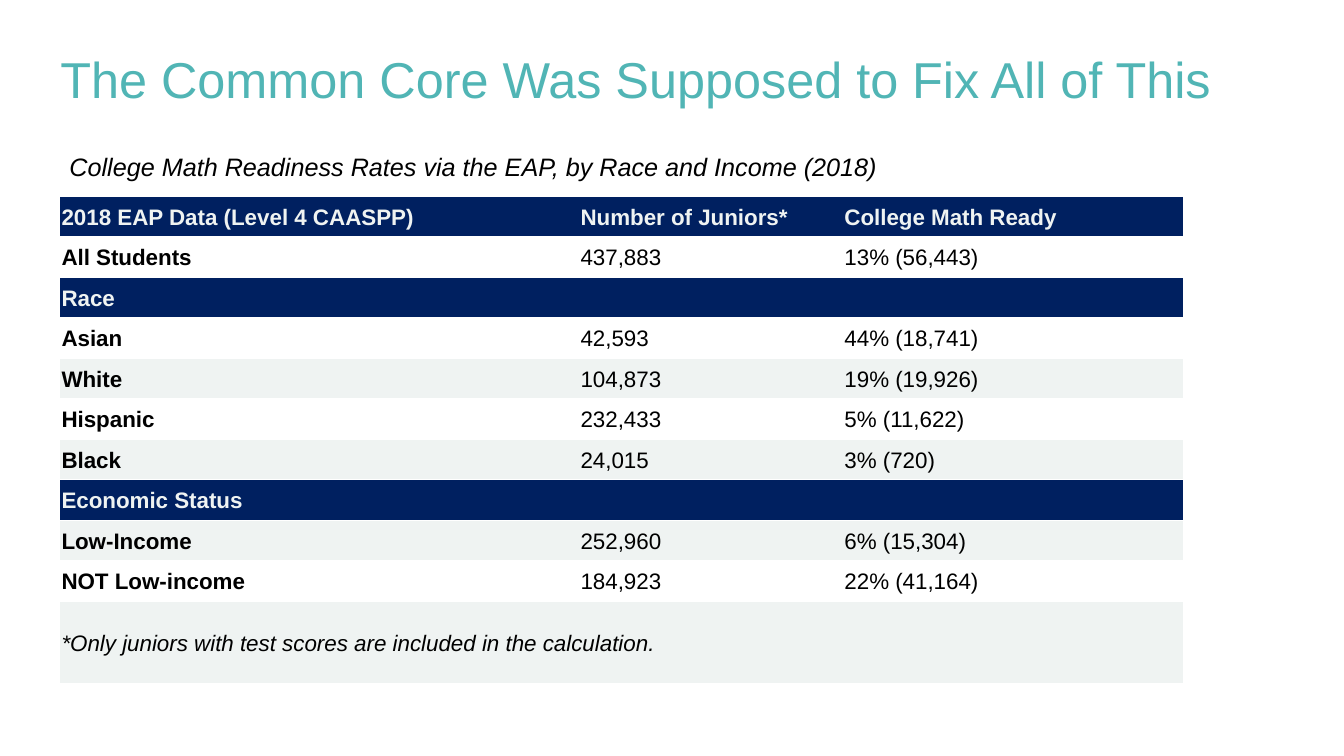
from dataclasses import dataclass

import pptx
import pptx.dml.color
import pptx.enum.text
import pptx.oxml
import pptx.oxml.ns
import pptx.slide
import pptx.table
import pptx.text.text
import pptx.util
from pptx.util import Cm

NAVY = pptx.dml.color.RGBColor(0x00, 0x20, 0x60)
PALE = pptx.dml.color.RGBColor(0xEF, 0xF3, 0xF2)
WHITE = pptx.dml.color.RGBColor(0xFF, 0xFF, 0xFF)
BLACK = pptx.dml.color.RGBColor(0x00, 0x00, 0x00)
TEAL = pptx.dml.color.RGBColor(0x51, 0xB5, 0xB5)

COLUMN_WIDTHS = (Cm(13.08), Cm(6.65), Cm(8.59))
ROW_HEIGHT = Cm(1.02)
NOTE_HEIGHT = Cm(2.08)
TABLE_LEFT = Cm(1.5)
TABLE_WIDTH = sum(COLUMN_WIDTHS)


@dataclass(frozen=True)
class ReadinessRow:
    """A table row; a single text spans all columns."""

    texts: tuple[str, ...]
    heading: bool = False
    note: bool = False


ROWS = (
    ReadinessRow(
        ("2018 EAP Data (Level 4 CAASPP)", "Number of Juniors*", "College Math Ready"),
        heading=True,
    ),
    ReadinessRow(("All Students", "437,883", "13% (56,443)")),
    ReadinessRow(("Race",), heading=True),
    ReadinessRow(("Asian", "42,593", "44% (18,741)")),
    ReadinessRow(("White", "104,873", "19% (19,926)")),
    ReadinessRow(("Hispanic", "232,433", "5% (11,622)")),
    ReadinessRow(("Black", "24,015", "3% (720)")),
    ReadinessRow(("Economic Status",), heading=True),
    ReadinessRow(("Low-Income", "252,960", "6% (15,304)")),
    ReadinessRow(("NOT Low-income", "184,923", "22% (41,164)")),
    ReadinessRow(
        ("*Only juniors with test scores are included in the calculation.",), note=True
    ),
)


def write_text(
    text_frame: pptx.text.text.TextFrame,
    text: str,
    size: int,
    color: pptx.dml.color.RGBColor,
    bold: bool = False,
    italic: bool = False,
) -> None:
    paragraph = text_frame.paragraphs[0]
    paragraph.alignment = pptx.enum.text.PP_ALIGN.LEFT
    paragraph.line_spacing = 1.07
    run = paragraph.add_run()
    run.text = text
    run.font.name = "Arial"
    run.font.size = pptx.util.Pt(size)
    run.font.bold = bold
    run.font.italic = italic
    run.font.color.rgb = color


def set_borders(cell: pptx.table._Cell, column_index: int) -> None:
    """Draw white rules around the row, with none between its cells."""
    last_column = len(COLUMN_WIDTHS) - 1
    visible = {"L": column_index == 0, "R": column_index == last_column, "T": True, "B": True}
    namespace = pptx.oxml.ns.nsdecls("a")
    for side, shown in visible.items():
        paint = f'<a:solidFill><a:srgbClr val="{WHITE}"/></a:solidFill>' if shown else "<a:noFill/>"
        cell._tc.get_or_add_tcPr().append(
            pptx.oxml.parse_xml(f'<a:ln{side} {namespace} w="12700">{paint}</a:ln{side}>')
        )


def add_readiness_table(slide: pptx.slide.Slide) -> None:
    height = ROW_HEIGHT * (len(ROWS) - 1) + NOTE_HEIGHT
    table = slide.shapes.add_table(
        len(ROWS), len(COLUMN_WIDTHS), TABLE_LEFT, Cm(4.95), TABLE_WIDTH, height
    ).table
    for column, width in zip(table.columns, COLUMN_WIDTHS):
        column.width = width

    for row_index, row in enumerate(ROWS):
        table.rows[row_index].height = NOTE_HEIGHT if row.note else ROW_HEIGHT
        band = WHITE if row_index % 2 else PALE
        for column_index in range(len(COLUMN_WIDTHS)):
            cell = table.cell(row_index, column_index)
            set_borders(cell, column_index)
            cell.fill.solid()
            cell.fill.fore_color.rgb = NAVY if row.heading else band
            cell.vertical_anchor = pptx.enum.text.MSO_ANCHOR.MIDDLE
            cell.margin_left = cell.margin_right = Cm(0.05)
            cell.margin_top = cell.margin_bottom = 0
        if len(row.texts) == 1:
            table.cell(row_index, 0).merge(table.cell(row_index, len(COLUMN_WIDTHS) - 1))
        for column_index, text in enumerate(row.texts):
            write_text(
                table.cell(row_index, column_index).text_frame,
                text,
                16,
                PALE if row.heading else BLACK,
                bold=row.heading or (column_index == 0 and not row.note),
                italic=row.note,
            )


def add_title(slide: pptx.slide.Slide, slide_width: int) -> None:
    title = slide.shapes.title
    title.left, title.top, title.width, title.height = 0, Cm(0.97), slide_width, Cm(1.78)
    text_frame = title.text_frame
    text_frame.margin_left = Cm(1.52)
    text_frame.vertical_anchor = pptx.enum.text.MSO_ANCHOR.TOP
    text_frame.auto_size = pptx.enum.text.MSO_AUTO_SIZE.NONE
    write_text(text_frame, "The Common Core Was Supposed to Fix All of This", 36, TEAL)


def add_subtitle(slide: pptx.slide.Slide) -> None:
    subtitle = slide.shapes.add_textbox(TABLE_LEFT, Cm(3.63), TABLE_WIDTH, Cm(1.02))
    subtitle.text_frame.word_wrap = True
    write_text(
        subtitle.text_frame,
        "College Math Readiness Rates via the EAP, by Race and Income (2018)",
        18,
        BLACK,
        italic=True,
    )


def main() -> None:
    presentation = pptx.Presentation()
    presentation.slide_width = Cm(33.87)
    presentation.slide_height = Cm(19.05)
    slide = presentation.slides.add_slide(presentation.slide_layouts[5])
    add_title(slide, presentation.slide_width)
    add_subtitle(slide)
    add_readiness_table(slide)
    presentation.save("out.pptx")


if __name__ == "__main__":
    main()
